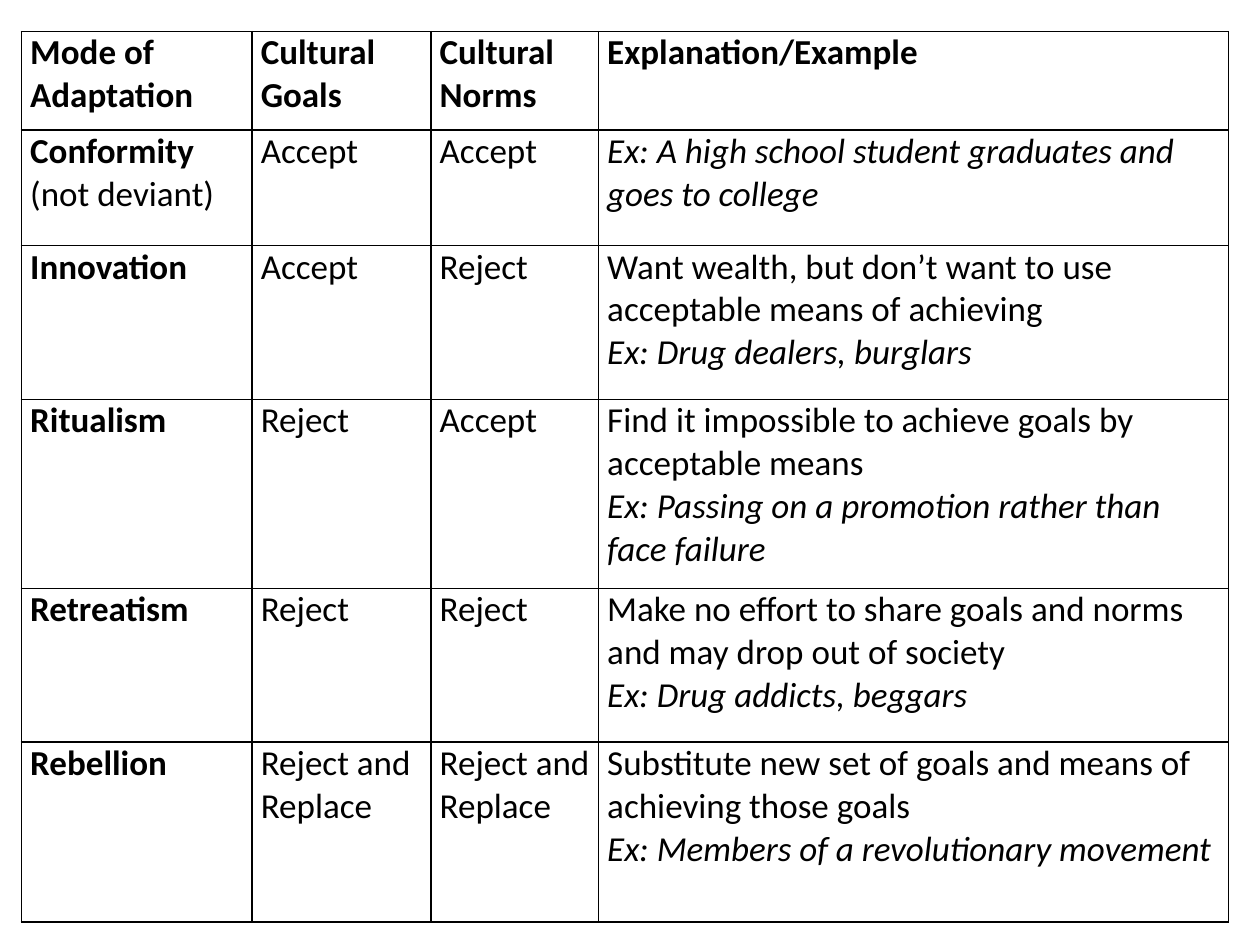
from lxml import etree
from pptx import Presentation
from pptx import util as u
from pptx.dml.color import RGBColor
from pptx.oxml.ns import qn

COLORS = {"paper": "FFFFFF", "ink": "000000"}
FONT, SIZE = "Calibri", 20
SLIDE_W, SLIDE_H = 10, 7.5
COL_WIDTHS = [1.83, 1.42, 1.33, 5]
ROW_HEIGHTS = [0.78, 0.92, 1.22, 1.5, 1.22, 1.43]

HEADINGS = ["Mode of Adaptation", "Cultural Goals", "Cultural Norms",
            "Explanation/Example"]
# mode, note, goals, norms, explanation, example
MODES = [
    ("Conformity", "(not deviant)", "Accept", "Accept", "",
     "Ex: A high school student graduates and goes to college"),
    ("Innovation", "", "Accept", "Reject",
     "Want wealth, but don’t want to use acceptable means of achieving",
     "Ex: Drug dealers, burglars"),
    ("Ritualism", "", "Reject", "Accept",
     "Find it impossible to achieve goals by acceptable means",
     "Ex: Passing on a promotion rather than face failure"),
    ("Retreatism", "", "Reject", "Reject",
     "Make no effort to share goals and norms and may drop out of society",
     "Ex: Drug addicts, beggars"),
    ("Rebellion", "", "Reject and Replace", "Reject and Replace",
     "Substitute new set of goals and means of achieving those goals",
     "Ex: Members of a revolutionary movement"),
]


def rgb(name):
    return RGBColor.from_string(COLORS[name])


def add_run(p, words, bold=False, italic=False):
    r = p.add_run()
    r.text = words
    r.font.name, r.font.size = FONT, u.Pt(SIZE)
    r.font.bold, r.font.italic = bold, italic
    r.font.color.rgb = rgb("ink")


def add_borders(cell):
    tc_pr = cell._tc.get_or_add_tcPr()
    for side in ("lnL", "lnR", "lnT", "lnB"):
        ln = etree.SubElement(tc_pr, qn("a:" + side), w=str(u.Pt(1)))
        fill = etree.SubElement(ln, qn("a:solidFill"))
        etree.SubElement(fill, qn("a:srgbClr"), val=COLORS["ink"])


def style_cell(cell):
    cell.margin_left = cell.margin_right = u.Inches(0.07)
    cell.margin_top = cell.margin_bottom = 0
    add_borders(cell)
    cell.fill.solid()
    cell.fill.fore_color.rgb = rgb("paper")


def fill_mode_row(cells, mode, note, goals, norms, explanation, example):
    name_p, goals_p, norms_p, p = [c.text_frame.paragraphs[0] for c in cells]
    add_run(name_p, mode + " " if note else mode, bold=True)
    if note:
        add_run(name_p, note)
    add_run(goals_p, goals)
    add_run(norms_p, norms)
    if explanation:
        add_run(p, explanation)
        p = cells[3].text_frame.add_paragraph()
    add_run(p, example, italic=True)


def add_adaptation_table(slide, left, top, width, height):
    """Share the box out among columns and rows in proportion."""
    table = slide.shapes.add_table(
        len(ROW_HEIGHTS), len(COL_WIDTHS), u.Inches(left), u.Inches(top),
        u.Inches(width), u.Inches(height)).table
    table.first_row = table.horz_banding = False
    for col, share in zip(table.columns, COL_WIDTHS):
        col.width = u.Inches(width * share / sum(COL_WIDTHS))
    for row, share in zip(table.rows, ROW_HEIGHTS):
        row.height = u.Inches(height * share / sum(ROW_HEIGHTS))
    for cell in table.iter_cells():
        style_cell(cell)
    header, *body = [list(row.cells) for row in table.rows]
    for cell, heading in zip(header, HEADINGS):
        add_run(cell.text_frame.paragraphs[0], heading, bold=True)
    for cells, mode in zip(body, MODES):
        fill_mode_row(cells, *mode)


def main():
    prs = Presentation()
    prs.slide_width, prs.slide_height = u.Inches(SLIDE_W), u.Inches(SLIDE_H)
    slide = prs.slides.add_slide(prs.slide_layouts[6])
    slide.background.fill.solid()
    slide.background.fill.fore_color.rgb = rgb("paper")
    add_adaptation_table(slide, 0.17, 0.25, sum(COL_WIDTHS), sum(ROW_HEIGHTS))
    prs.save("out.pptx")


if __name__ == "__main__":
    main()
